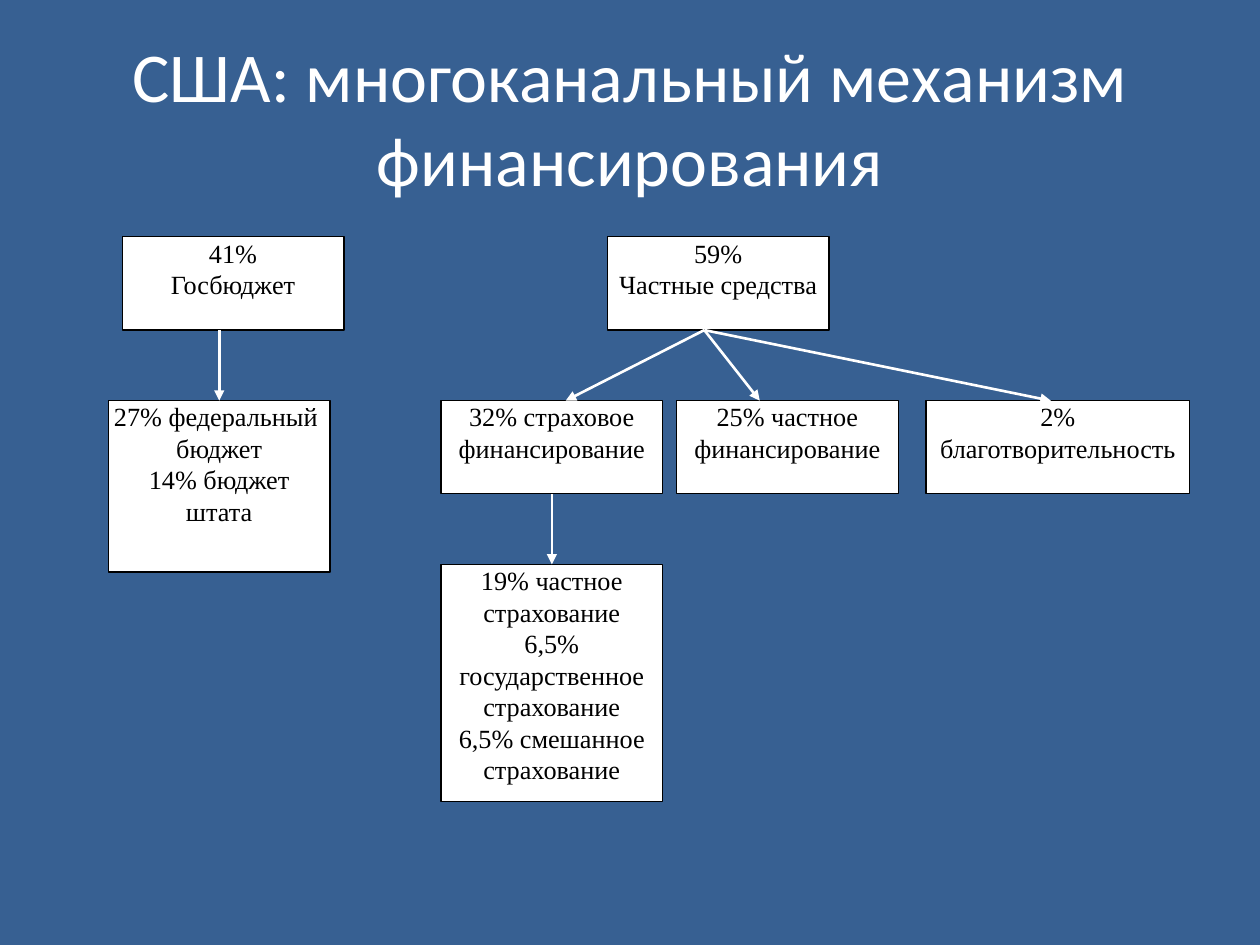
import pptx
import pptx.dml.color
import pptx.enum.shapes
import pptx.enum.text
import pptx.oxml.ns
import pptx.util
import lxml.etree

Inches = pptx.util.Inches
Pt = pptx.util.Pt
CENTER = pptx.enum.text.PP_ALIGN.CENTER
ANCHOR = pptx.enum.text.MSO_ANCHOR
COLORS = {"back": "376092", "white": "FFFFFF", "black": "000000"}
FRAME = {"margin_left": 0, "margin_right": 0, "margin_top": 0,
         "margin_bottom": 0, "word_wrap": True, "vertical_anchor": ANCHOR.TOP}
TITLE = {"name": "Calibri", "size": Pt(40)}
BODY = {"name": "Times New Roman", "size": Pt(15)}


def color(name):
    return pptx.dml.color.RGBColor.from_string(COLORS[name])


def format(target, values):
    for key, value in values.items():
        setattr(target, key, value)


deck = pptx.Presentation()
deck.slide_width, deck.slide_height = Inches(10), Inches(7.5)
slide = deck.slides.add_slide(deck.slide_layouts[5])
slide.background.fill.solid()
slide.background.fill.fore_color.rgb = color("back")

title = slide.shapes.title
format(title, {"left": Inches(0.5), "top": Inches(0.3),
               "width": Inches(9), "height": Inches(1.25)})
title.text_frame.text = "США: многоканальный механизм финансирования"
title.text_frame.vertical_anchor = ANCHOR.MIDDLE
head = title.text_frame.paragraphs[0]
head.alignment = CENTER
format(head.runs[0].font, TITLE)
head.runs[0].font.color.rgb = color("white")

WIDE = 1.76
TOP, MID, LOW = 1.88, 3.18, 4.48
nodes = {
    "state": (0.97, TOP, WIDE, 0.74, ["41%", "Госбюджет"]),
    "private": (4.82, TOP, WIDE, 0.74, ["59%", "Частные средства"]),
    "budget": (0.86, MID, WIDE, 1.36,
               ["27% федеральный ", "бюджет", "14% бюджет", "штата"]),
    "cover": (3.5, MID, WIDE, 0.74, ["32% страховое финансирование"]),
    "direct": (5.37, MID, WIDE, 0.74, ["25% частное финансирование"]),
    "gifts": (7.35, MID, 2.09, 0.74, ["2% благотворительность"]),
    "kinds": (3.5, LOW, WIDE, 1.88,
              ["19% частное страхование",
               "6,5% государственное страхование",
               "6,5% смешанное страхование"]),
}
boxes = {}
for name, (left, top, width, height, lines) in nodes.items():
    box = slide.shapes.add_shape(
        pptx.enum.shapes.MSO_SHAPE.RECTANGLE,
        Inches(left), Inches(top), Inches(width), Inches(height))
    box.shadow.inherit = False
    box.fill.solid()
    box.fill.fore_color.rgb = color("white")
    box.line.color.rgb = color("black")
    box.line.width = Pt(0.75)
    format(box.text_frame, FRAME)
    box.text_frame.text = "\n".join(lines)
    for para in box.text_frame.paragraphs:
        para.alignment = CENTER
        format(para.runs[0].font, BODY)
        para.runs[0].font.color.rgb = color("black")
    boxes[name] = box

FORK, BASE = 5.59, 2.62
arrows = [
    (FORK, BASE, 4.49, MID, None, None),
    (FORK, BASE, 6.03, MID, None, None),
    (FORK, BASE, 8.34, MID, None, None),
    (4.38, 3.92, 4.38, LOW, "cover", "kinds"),
    (1.74, BASE, 1.74, MID, None, "budget"),
]
for x1, y1, x2, y2, start, end in arrows:
    arrow = slide.shapes.add_connector(
        pptx.enum.shapes.MSO_CONNECTOR.STRAIGHT,
        Inches(x1), Inches(y1), Inches(x2), Inches(y2))
    if start:
        arrow.begin_connect(boxes[start], 2)
    if end:
        arrow.end_connect(boxes[end], 0)
    arrow.line.color.rgb = color("white")
    arrow.line.width = Pt(1.5)
    line = arrow.line._get_or_add_ln()
    lxml.etree.SubElement(line, pptx.oxml.ns.qn("a:tailEnd"), type="triangle")
    lxml.etree.SubElement(arrow._element.spPr, pptx.oxml.ns.qn("a:effectLst"))

deck.save("out.pptx")
